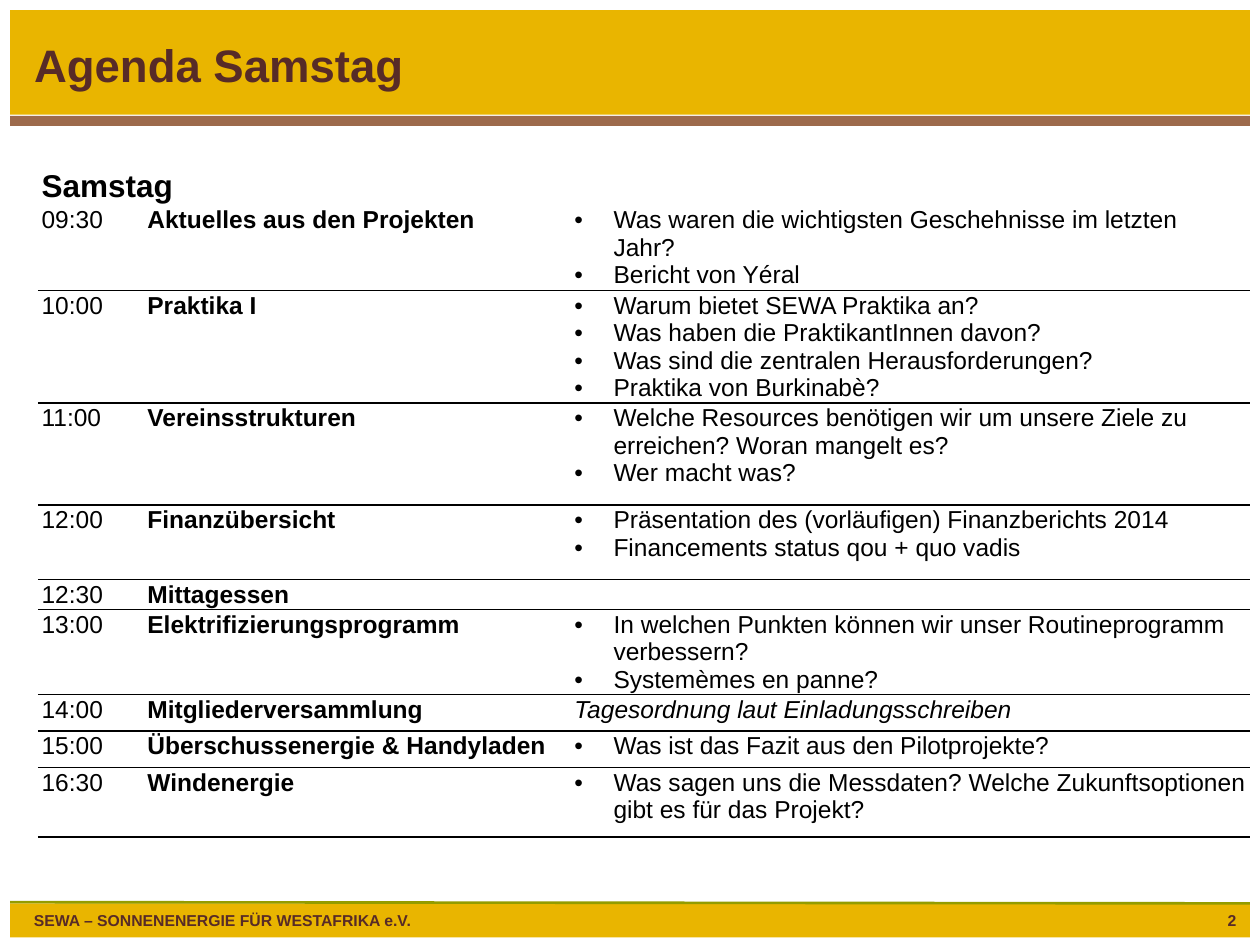
from dataclasses import dataclass

from lxml import etree
from pptx import Presentation
from pptx.dml.color import RGBColor
from pptx.enum.shapes import MSO_CONNECTOR, MSO_SHAPE
from pptx.enum.text import MSO_ANCHOR, MSO_AUTO_SIZE, PP_ALIGN
from pptx.oxml.ns import qn
from pptx.util import Inches, Pt

RECTANGLE = MSO_SHAPE.RECTANGLE
STRAIGHT = MSO_CONNECTOR.STRAIGHT
MIDDLE, TOP = MSO_ANCHOR.MIDDLE, MSO_ANCHOR.TOP
LEFT, RIGHT = PP_ALIGN.LEFT, PP_ALIGN.RIGHT

# Lengths in inches
SLIDE_W, SLIDE_H = 10, 7.5
EDGE = 0.08
BAND_W = SLIDE_W - 2 * EDGE
TEXT_LEFT = 0.17
FOOTER_TOP = 7.17
TABLE_LEFT, TABLE_TOP = 0.3, 1.33
COLUMN_WIDTHS = (0.84, 3.39, 5.39)
HEADING_HEIGHT = 0.12
BULLET_INDENT = 0.31

FONT = "Arial"
GOLD, BROWN, GREEN = "E9B500", "9D6A4C", "939C00"
DARK_BROWN, BLACK = "572B27", "000000"


@dataclass
class Band:
    top: float
    height: float
    fill: str


@dataclass
class Session:
    time: str
    topic: str
    height: float
    points: tuple[str, ...] = ()
    note: str = ""


BANDS = (
    Band(EDGE, 0.83, GOLD),
    Band(0.92, 0.08, BROWN),
    Band(FOOTER_TOP, 0.27, GOLD),
)

SESSIONS = (
    Session("09:30", "Aktuelles aus den Projekten", 0.67, (
        "Was waren die wichtigsten Geschehnisse im letzten Jahr?",
        "Bericht von Yéral")),
    Session("10:00", "Praktika I", 0.81, (
        "Warum bietet SEWA Praktika an?",
        "Was haben die PraktikantInnen davon?",
        "Was sind die zentralen Herausforderungen?",
        "Praktika von Burkinabè?")),
    Session("11:00", "Vereinsstrukturen", 0.81, (
        "Welche Resources benötigen wir um unsere Ziele zu erreichen? Woran mangelt es?",
        "Wer macht was?")),
    Session("12:00", "Finanzübersicht", 0.59, (
        "Präsentation des (vorläufigen) Finanzberichts 2014",
        "Financements status qou + quo vadis")),
    Session("12:30", "Mittagessen", 0.12),
    Session("13:00", "Elektrifizierungsprogramm", 0.29, (
        "In welchen Punkten können wir unser Routineprogramm verbessern?",
        "Systemèmes en panne?")),
    Session("14:00", "Mitgliederversammlung", 0.29,
            note="Tagesordnung laut Einladungsschreiben"),
    Session("15:00", "Überschussenergie & Handyladen", 0.29, (
        "Was ist das Fazit aus den Pilotprojekte?",)),
    Session("16:30", "Windenergie", 0.55, (
        "Was sagen uns die Messdaten? Welche Zukunftsoptionen gibt es für das Projekt?",)),
)


def rgb(color: str) -> RGBColor:
    return RGBColor.from_string(color)


def style(paragraph, size: float, color: str = BLACK, bold: bool = False,
          italic: bool = False) -> None:
    font = paragraph.font
    font.name, font.size = FONT, Pt(size)
    font.bold, font.italic = bold, italic
    font.color.rgb = rgb(color)


def add_band(slide, band: Band) -> None:
    bar = slide.shapes.add_shape(RECTANGLE, Inches(EDGE), Inches(band.top),
                                 Inches(BAND_W), Inches(band.height))
    bar.shadow.inherit = False
    bar.fill.solid()
    bar.fill.fore_color.rgb = rgb(band.fill)
    bar.line.fill.background()


def add_footer_rule(slide) -> None:
    rule = slide.shapes.add_connector(
        STRAIGHT, Inches(EDGE), Inches(FOOTER_TOP - 0.01),
        Inches(SLIDE_W - EDGE), Inches(FOOTER_TOP))
    rule.line.color.rgb = rgb(GREEN)
    rule.line.width = Pt(1.5)
    etree.SubElement(rule.element.spPr, qn("a:effectLst"))


def add_footer_text(slide, text: str, left: float, width: float, align) -> None:
    box = slide.shapes.add_textbox(Inches(left), Inches(FOOTER_TOP + 0.01),
                                   Inches(width), Inches(0.25))
    box.text_frame.word_wrap = True
    paragraph = box.text_frame.paragraphs[0]
    paragraph.text, paragraph.alignment = text, align
    style(paragraph, 9, DARK_BROWN, bold=True)


def place_title(slide, text: str) -> None:
    title = slide.shapes.title
    title.element.getparent().append(title.element)  # in front of the bands
    title.left, title.top = Inches(TEXT_LEFT), Inches(TEXT_LEFT)
    title.width, title.height = Inches(7.67), Inches(0.75)
    frame = title.text_frame
    frame.text = text
    frame.auto_size, frame.vertical_anchor = MSO_AUTO_SIZE.NONE, MIDDLE
    paragraph = frame.paragraphs[0]
    paragraph.alignment, paragraph.line_spacing = LEFT, Pt(26)
    style(paragraph, 26, DARK_BROWN, bold=True)


def add_bullet(paragraph) -> None:
    properties = paragraph._p.get_or_add_pPr()
    properties.set("marL", str(Inches(BULLET_INDENT)))
    properties.set("indent", str(-Inches(BULLET_INDENT)))
    etree.SubElement(properties, qn("a:buFont"), typeface=FONT)
    etree.SubElement(properties, qn("a:buChar"), char="•")


def format_cell(cell, ruled_edges: str, anchor=TOP) -> None:
    cell.margin_left = cell.margin_right = Inches(0.03)
    cell.margin_top = cell.margin_bottom = Inches(0.01)
    cell.vertical_anchor = anchor
    properties = cell._tc.get_or_add_tcPr()
    for edge in "LRTB":
        border = etree.SubElement(properties, qn(f"a:ln{edge}"), w=str(Pt(1)))
        if edge in ruled_edges:
            fill = etree.SubElement(border, qn("a:solidFill"))
            etree.SubElement(fill, qn("a:srgbClr"), val=BLACK)
        else:
            etree.SubElement(border, qn("a:noFill"))
    cell.fill.background()


def write_cell(cell, lines: tuple[str, ...], size: float = 14, bold: bool = False,
               italic: bool = False, bulleted: bool = False) -> None:
    frame = cell.text_frame
    frame.text = "\n".join(lines)
    for paragraph in frame.paragraphs:
        if bulleted:
            add_bullet(paragraph)
        style(paragraph, size, bold=bold, italic=italic)


def add_agenda(slide, heading: str, sessions: tuple[Session, ...]) -> None:
    heights = [HEADING_HEIGHT] + [session.height for session in sessions]
    table = slide.shapes.add_table(
        len(heights), len(COLUMN_WIDTHS), Inches(TABLE_LEFT), Inches(TABLE_TOP),
        Inches(sum(COLUMN_WIDTHS)), Inches(sum(heights))).table
    table.first_row = table.horz_banding = False
    for column, width in zip(table.columns, COLUMN_WIDTHS):
        column.width = Inches(width)
    for row, height in zip(table.rows, heights):
        row.height = Inches(height)

    # Heading across all columns, without rules
    for cell in table.rows[0].cells:
        format_cell(cell, "", MIDDLE)
    table.cell(0, 0).merge(table.cell(0, 2))
    write_cell(table.cell(0, 0), (heading,), 18, bold=True)

    # One row per session, ruled below
    for number, session in enumerate(sessions, start=1):
        time, topic, content = (table.cell(number, column) for column in range(3))
        for cell in (time, topic, content):
            format_cell(cell, "B" if number == 1 else "TB")
        write_cell(time, (session.time,))
        write_cell(topic, (session.topic,), bold=True)
        if session.points:
            write_cell(content, session.points, bulleted=True)
        elif session.note:
            write_cell(content, (session.note,), italic=True)
        else:
            topic.merge(content)


def main() -> None:
    deck = Presentation()
    deck.slide_width, deck.slide_height = Inches(SLIDE_W), Inches(SLIDE_H)
    slide = deck.slides.add_slide(deck.slide_layouts[5])

    # Frame of the page
    for band in BANDS:
        add_band(slide, band)
    add_footer_rule(slide)
    add_footer_text(slide, "SEWA – SONNENENERGIE FÜR WESTAFRIKA e.V.",
                    TEXT_LEFT, 9.67, LEFT)

    # Content
    place_title(slide, "Agenda Samstag")
    add_agenda(slide, "Samstag", SESSIONS)
    add_footer_text(slide, "2", 9.33, 0.58, RIGHT)
    deck.save("out.pptx")


if __name__ == "__main__":
    main()
